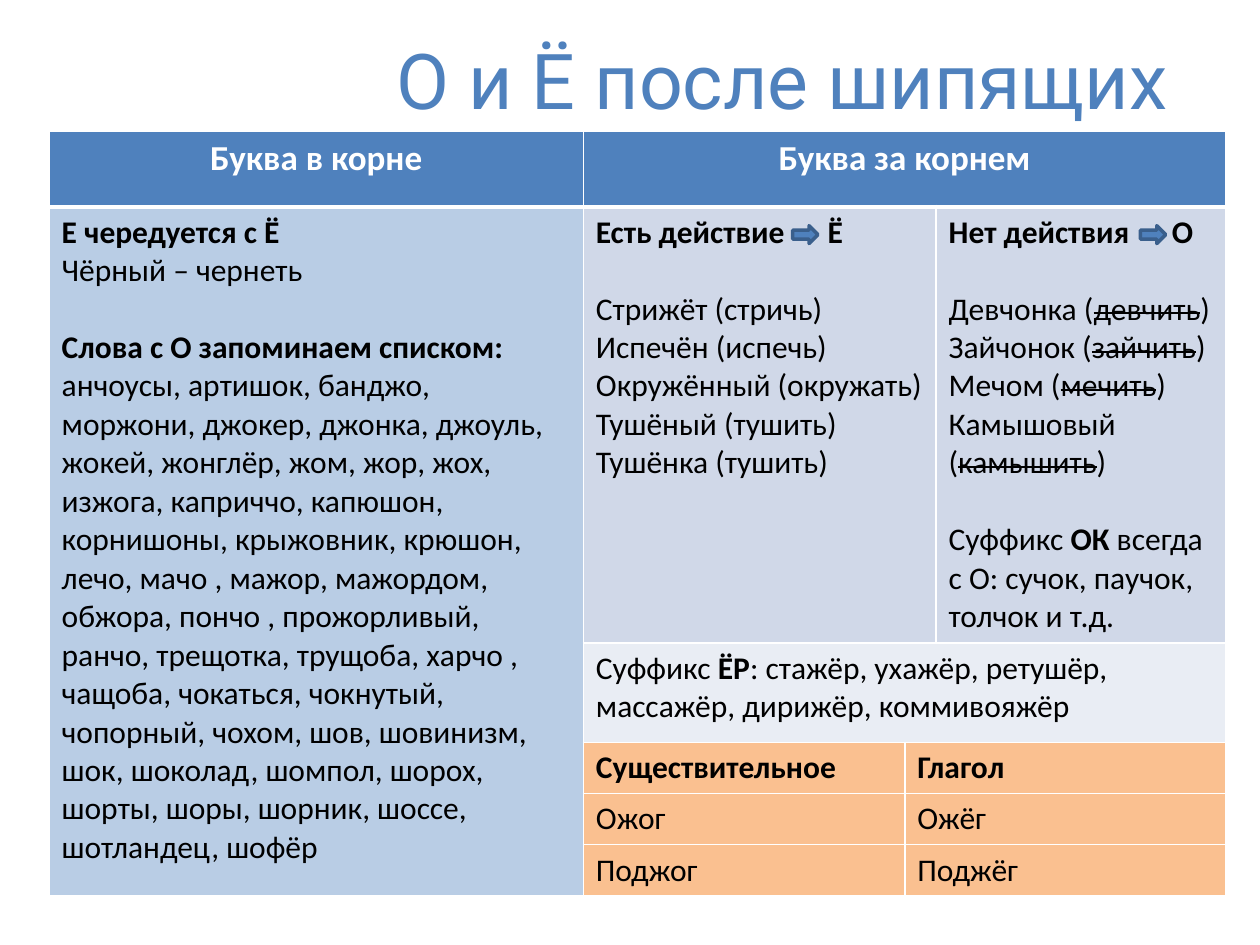
import pptx
import pptx.dml.color
import pptx.enum.shapes
import pptx.enum.text
import pptx.oxml
import pptx.oxml.ns
import pptx.util
from lxml import etree

Cm, Pt = pptx.util.Cm, pptx.util.Pt
Align = pptx.enum.text.PP_ALIGN
HUES = {
    "blue": "4F81BD", "edge": "3A5F8C", "pale": "B9CDE5", "mist": "D0D8E8",
    "ice": "E9EDF4", "peach": "FAC090", "white": "FFFFFF", "black": "000000",
}
COLS = [10.77, 6.48, 0.63, 5.84]
ROWS = [1.53, 8.79, 2.01, 1.03, 1.03, 1.03]
ROOT = [
    "*Е чередуется с Ё*",
    "Чёрный – чернеть",
    "*Слова с О запоминаем списком: *анчоусы, артишок, банджо, моржони, джокер, "
    "джонка, джоуль, жокей, жонглёр, жом, жор, жох, изжога, каприччо, капюшон, "
    "корнишоны, крыжовник, крюшон, лечо, мачо , мажор, мажордом, обжора, пончо , "
    "прожорливый, ранчо, трещотка, трущоба, харчо , чащоба, чокаться, чокнутый, "
    "чопорный, чохом, шов, шовинизм, шок, шоколад, шомпол, шорох, шорты, шоры, "
    "шорник, шоссе, шотландец, шофёр",
]
DEED = [
    "*Есть действие\tЁ*", "Стрижёт (стричь)", "Испечён (испечь)",
    "Окружённый (окружать) Тушёный (тушить)", "Тушёнка (тушить)",
]
NONE = [
    "*Нет действия\tО*", "Девчонка (~девчить~)", "Зайчонок (~зайчить~)",
    "Мечом (~мечить~)", "Камышовый (~камышить~)",
    "Суффикс *ОК* всегда с О: сучок, паучок, толчок и т.д.",
]
SUFFIX = ["Суффикс *ЁР*: стажёр, ухажёр, ретушёр, массажёр, дирижёр, коммивояжёр"]
PAIRS = [("*Существительное*", "*Глагол*"), ("Ожог", "Ожёг"), ("Поджог", "Поджёг")]


def hue(name):
    """Return the named colour."""
    return pptx.dml.color.RGBColor.from_string(HUES[name])


def write(frame, lines, size=18, font="Calibri", color="black",
          align=Align.LEFT, gaps=(), tab=None):
    """Fill a frame; *bold* and ~struck~ mark runs, gaps lists spaced lines."""
    for row, line in enumerate(lines):
        para = frame.paragraphs[0] if row == 0 else frame.add_paragraph()
        para.alignment = align
        if row in gaps:
            para.space_before = Pt(22)
        if tab and "\t" in line:
            stops = etree.SubElement(para._p.get_or_add_pPr(), pptx.oxml.ns.qn("a:tabLst"))
            etree.SubElement(stops, pptx.oxml.ns.qn("a:tab"), pos=str(Cm(tab)), algn="l")
        for bold, part in enumerate(line.split("*")):
            for struck, piece in enumerate(part.split("~")):
                if not piece:
                    continue
                run = para.add_run()
                run.text = piece
                run.font.size, run.font.name = Pt(size), font
                run.font.bold = bold % 2 == 1
                run.font.color.rgb = hue(color)
                if struck % 2:
                    run._r.get_or_add_rPr().set("strike", "sngStrike")


def edge(cell, row):
    """Draw white cell borders, heavy below the header row."""
    props = cell._tc.get_or_add_tcPr()
    for spot, side in enumerate("LRTB"):
        heavy = (row, side) in ((0, "B"), (1, "T"))
        line = etree.Element(pptx.oxml.ns.qn("a:ln" + side), w=str(Pt(3 if heavy else 1)))
        fill = etree.SubElement(line, pptx.oxml.ns.qn("a:solidFill"))
        etree.SubElement(fill, pptx.oxml.ns.qn("a:srgbClr"), val=HUES["white"])
        props.insert(spot, line)


def head(slide, left, top, width, height):
    """Place the slide title in its box."""
    title = slide.shapes.title
    title.left, title.top, title.width, title.height = map(Cm, (left, top, width, height))
    title.text_frame.vertical_anchor = pptx.enum.text.MSO_ANCHOR.MIDDLE
    write(title.text_frame, ["О и Ё после шипящих"], size=44, font="Roboto",
          color="blue", align=Align.CENTER)


def grid(slide, left, top):
    """Build the rule table and the arrows over it."""
    table = slide.shapes.add_table(
        len(ROWS), len(COLS), Cm(left), Cm(top), Cm(sum(COLS)), Cm(sum(ROWS))).table
    for col, width in zip(table.columns, COLS):
        col.width = Cm(width)
    for row, height in zip(table.rows, ROWS):
        row.height = Cm(height)
    tints = ["blue", "mist", "ice", "peach", "peach", "peach"]
    for row, tint in enumerate(tints):
        for col in range(len(COLS)):
            cell = table.cell(row, col)
            cell.fill.solid()
            cell.fill.fore_color.rgb = hue("pale" if row and col == 0 else tint)
            edge(cell, row)
    spans = [(0, 1, 0, 3), (1, 0, 5, 0), (1, 1, 1, 2), (2, 1, 2, 3)]
    spans += [(row, 2, row, 3) for row in (3, 4, 5)]
    for r1, c1, r2, c2 in spans:
        table.cell(r1, c1).merge(table.cell(r2, c2))

    def put(row, col, lines, **form):
        """Write lines into one cell."""
        write(table.cell(row, col).text_frame, lines, **form)

    for col, name in enumerate(("*Буква в корне*", "*Буква за корнем*")):
        put(0, col, [name], size=20, color="white", align=Align.CENTER)
    put(1, 0, ROOT, gaps=[2])
    put(1, 1, DEED, gaps=[1], tab=4.67)
    put(1, 3, NONE, gaps=[1, 5], tab=4.5)
    put(2, 1, SUFFIX)
    for row, pair in enumerate(PAIRS, 3):
        for col, word in enumerate(pair, 1):
            put(row, col, [word])
    for shift in (14.99, 22):
        arrow(slide, left + shift, top + 1.91, 0.51, 0.36)


def arrow(slide, left, top, width, height):
    """Draw a small block arrow in its box."""
    shape = slide.shapes.add_shape(
        pptx.enum.shapes.MSO_SHAPE.RIGHT_ARROW, *map(Cm, (left, top, width, height)))
    shape.shadow.inherit = False
    shape.fill.solid()
    shape.fill.fore_color.rgb = hue("blue")
    shape.line.color.rgb = hue("edge")
    shape.line.width = Pt(2)


def main():
    """Build and save the slide."""
    deck = pptx.Presentation()
    deck.slide_width, deck.slide_height = Cm(25.4), Cm(19.05)
    slide = deck.slides.add_slide(deck.slide_layouts[5])
    head(slide, 4.34, 0, 22.86, 3.18)
    grid(slide, 0.99, 2.64)
    deck.save("out.pptx")


if __name__ == "__main__":
    main()
